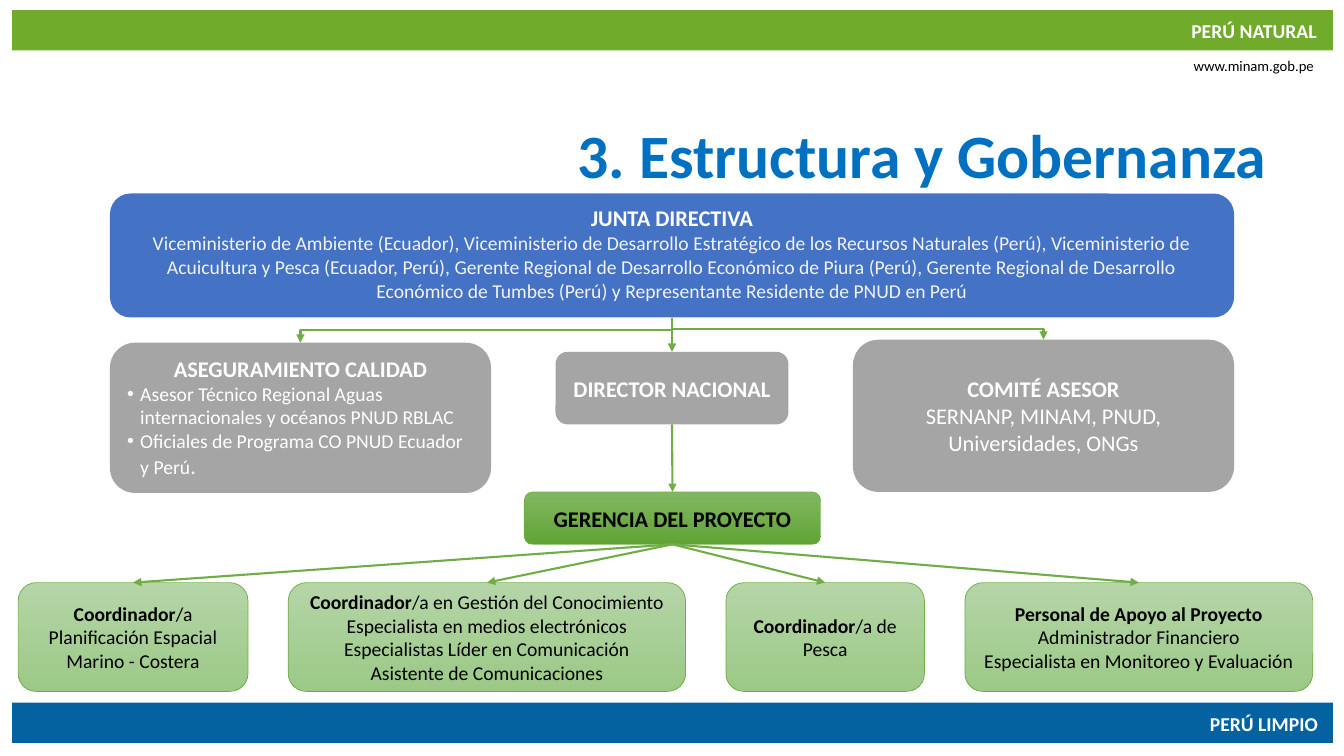
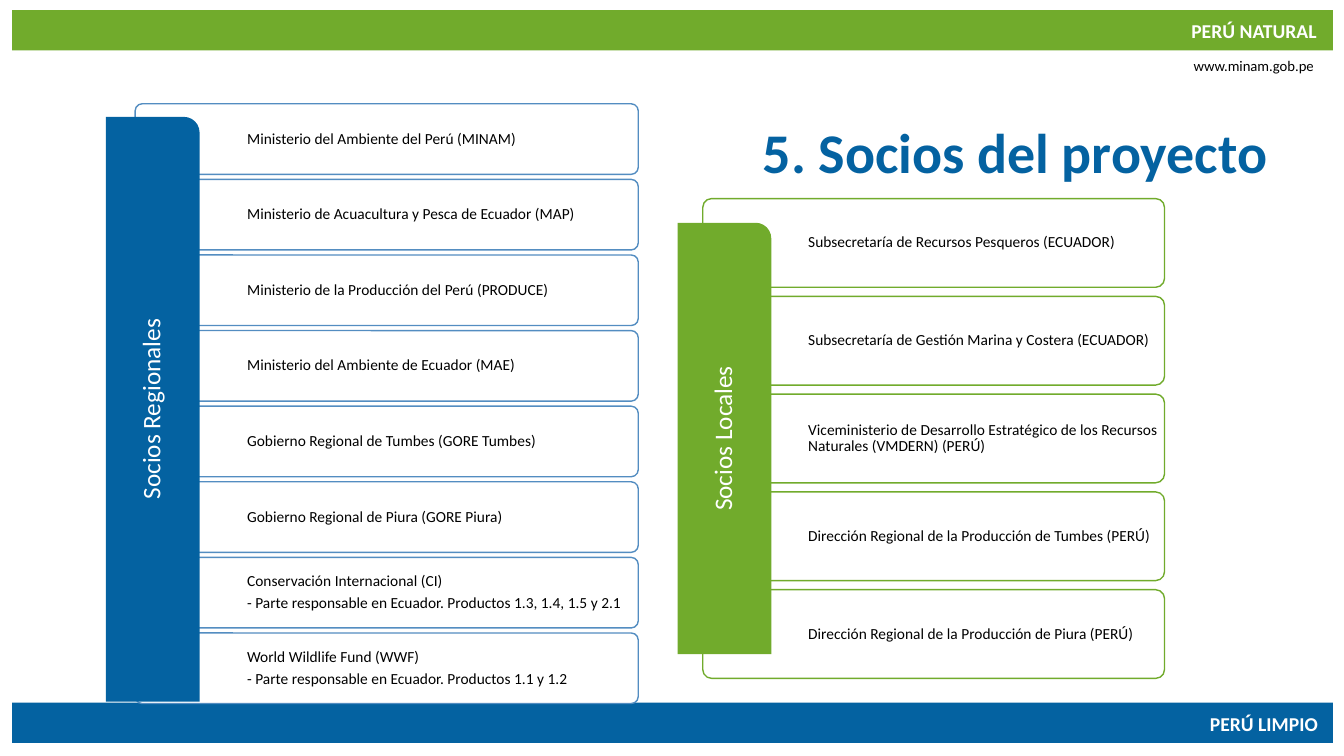
from lxml import etree
from pptx import Presentation
from pptx.dml.color import RGBColor
from pptx.enum.shapes import MSO_CONNECTOR, MSO_SHAPE
from pptx.enum.text import MSO_ANCHOR, PP_ALIGN
from pptx.oxml.ns import qn
from pptx.util import Inches, Pt

RECT = MSO_SHAPE.RECTANGLE
ROUNDED = MSO_SHAPE.ROUNDED_RECTANGLE
ROUND_CORNER = MSO_SHAPE.ROUND_1_RECTANGLE
STRAIGHT, ELBOW = MSO_CONNECTOR.STRAIGHT, MSO_CONNECTOR.ELBOW
TOP, MIDDLE = MSO_ANCHOR.TOP, MSO_ANCHOR.MIDDLE
LEFT, CENTER, RIGHT = PP_ALIGN.LEFT, PP_ALIGN.CENTER, PP_ALIGN.RIGHT

FONT = "Calibri"
WHITE = RGBColor(0xFF, 0xFF, 0xFF)
BLACK = RGBColor(0x00, 0x00, 0x00)
OFF_WHITE = RGBColor(0xF2, 0xF2, 0xF2)
BAND_GREEN = RGBColor(0x71, 0xAB, 0x2C)
BAND_BLUE = RGBColor(0x04, 0x62, 0xA1)
TITLE_BLUE = RGBColor(0x00, 0x70, 0xC0)
BOARD_BLUE = RGBColor(0x44, 0x72, 0xC4)
GREY = RGBColor(0xA5, 0xA5, 0xA5)
LINE_GREEN = RGBColor(0x70, 0xAD, 0x47)
ROW_BLUE = RGBColor(0x53, 0x8D, 0xC1)
MANAGER_GREENS = (RGBColor(0x81, 0xB8, 0x61), RGBColor(0x62, 0xA3, 0x36))
TEAM_GREENS = (RGBColor(0xB5, 0xD5, 0xA7), RGBColor(0x9C, 0xC9, 0x87))


def add_box(slide, preset, place, fill, line=None, line_width=1):
    box = slide.shapes.add_shape(preset, *[Inches(v) for v in place])
    box.shadow.inherit = False
    if fill in (MANAGER_GREENS, TEAM_GREENS):
        box.fill.gradient()
        box.fill.gradient_angle = 270
        for stop, color in zip(box.fill.gradient_stops, fill):
            stop.color.rgb = color
    else:
        box.fill.solid()
        box.fill.fore_color.rgb = fill
    if line is None:
        box.line.fill.background()
    else:
        box.line.color.rgb = line
        box.line.width = Pt(line_width)
    return box


def write(shape, paragraphs, align=CENTER, anchor=MIDDLE, wrap=True, spacing=None):
    frame = shape.text_frame
    frame.word_wrap = wrap
    frame.vertical_anchor = anchor
    for index, runs in enumerate(paragraphs):
        paragraph = frame.add_paragraph() if index else frame.paragraphs[0]
        paragraph.alignment = align
        if spacing:
            paragraph.line_spacing = spacing
        for text, size, bold, color in runs:
            run = paragraph.add_run()
            run.text = text
            run.font.name = FONT
            run.font.size = Pt(size)
            run.font.bold = bold
            run.font.color.rgb = color
    return frame


prs = Presentation()
prs.slide_width, prs.slide_height = Inches(13.33), Inches(7.5)

titles = [
    ("3. Estructura y Gobernanza", 44, True, TITLE_BLUE),
    ("5. Socios del proyecto", 40, True, BAND_BLUE),
]
labels = [
    ((11.7, 0.14, 1.46, 0.34), ("PERÚ NATURAL", 14, True, WHITE)),
    ((11.89, 7.01, 1.28, 0.34), ("PERÚ LIMPIO", 14, True, WHITE)),
    ((11.71, 0.51, 1.42, 0.28), ("www.minam.gob.pe", 10.5, False, BLACK)),
]
for title in titles:
    slide = prs.slides.add_slide(prs.slide_layouts[6])
    for top, color in [(6.97, BAND_BLUE), (0.1, BAND_GREEN)]:
        add_box(slide, RECT, (0.12, top, 13.1, 0.4), color)
    for place, label in labels:
        label_box = slide.shapes.add_textbox(*[Inches(v) for v in place])
        write(label_box, [[label]], RIGHT, TOP, wrap=False)
    title_box = slide.shapes.add_textbox(Inches(0.67), Inches(1.19), Inches(12), Inches(0.59))
    write(title_box, [[title]], RIGHT, TOP, spacing=0.9)

governance, partners = prs.slides

board = add_box(governance, ROUNDED, (1.09, 1.92, 11.15, 1.23), BOARD_BLUE)
write(board, [
    [("JUNTA DIRECTIVA", 16, True, WHITE)],
    [("Viceministerio de Ambiente (Ecuador), Viceministerio de Desarrollo Estratégico de los "
      "Recursos Naturales (Perú), Viceministerio de Acuicultura y Pesca (Ecuador, Perú), "
      "Gerente Regional de Desarrollo Económico de Piura (Perú), Gerente Regional de "
      "Desarrollo Económico de Tumbes (Perú) y Representante Residente de PNUD en Perú",
      14, False, OFF_WHITE)],
], anchor=TOP)

director = add_box(governance, ROUNDED, (5.51, 3.49, 2.31, 0.72), GREY)
write(director, [[("DIRECTOR NACIONAL", 16, True, WHITE)]])

quality = add_box(governance, ROUNDED, (1.09, 3.4, 3.78, 1.49), GREY)
quality_text = write(quality, [
    [("ASEGURAMIENTO CALIDAD", 16, True, WHITE)],
    [("Asesor Técnico Regional Aguas internacionales y océanos PNUD RBLAC", 14, False, WHITE)],
    [("Oficiales de Programa CO PNUD Ecuador y Perú", 14, False, WHITE), (".", 16, False, WHITE)],
], anchor=TOP)
for advisor in quality_text.paragraphs[1:]:
    advisor.alignment = LEFT
    properties = advisor._p.get_or_add_pPr()
    properties.set("marL", str(Inches(0.13)))
    properties.set("indent", str(-Inches(0.13)))
    etree.SubElement(properties, qn("a:buFont")).set("typeface", "Arial")
    etree.SubElement(properties, qn("a:buChar")).set("char", "•")

committee = add_box(governance, ROUNDED, (8.46, 3.37, 3.78, 1.51), GREY)
write(committee, [
    [("COMITÉ ASESOR", 16, True, WHITE)],
    [("SERNANP, MINAM, PNUD, Universidades, ONGs", 16, False, WHITE)],
])

manager = add_box(governance, ROUNDED, (5.2, 4.88, 2.94, 0.52), MANAGER_GREENS, LINE_GREEN, 0.5)
write(manager, [[("GERENCIA DEL PROYECTO", 16, True, BLACK)]])

teams = [
    (0.18, 2.28, "Coordinador", ["/a Planificación Espacial Marino - Costera"]),
    (2.86, 3.94, "Coordinador", ["/a en Gestión del Conocimiento",
                                 "Especialista en medios electrónicos",
                                 "Especialistas Líder en Comunicación",
                                 "Asistente de Comunicaciones"]),
    (7.2, 1.97, "Coordinador", ["/a de Pesca"]),
    (9.57, 3.45, "Personal de Apoyo al Proyecto", ["", "Administrador Financiero",
                                                   "Especialista en Monitoreo y Evaluación"]),
]
links = [(board, director, STRAIGHT), (board, quality, ELBOW), (board, committee, ELBOW),
         (director, manager, STRAIGHT)]
for left, width, lead, (lead_rest, *members) in teams:
    team = add_box(governance, ROUNDED, (left, 5.78, width, 1.08), TEAM_GREENS, LINE_GREEN, 0.5)
    lead_runs = [(lead, 14, True, BLACK)]
    if lead_rest:
        lead_runs.append((lead_rest, 14, False, BLACK))
    write(team, [lead_runs] + [[(member, 14, False, BLACK)] for member in members])
    links.append((manager, team, STRAIGHT))

for upper, lower, kind in links:
    arrow = governance.shapes.add_connector(kind, 0, 0, 0, 0)
    arrow.begin_connect(upper, 2)
    arrow.end_connect(lower, 0)
    arrow.line.color.rgb = LINE_GREEN
    arrow.line.width = Pt(1.5)
    shape_properties = arrow._element.spPr
    etree.SubElement(shape_properties.find(qn("a:ln")), qn("a:tailEnd")).set("type", "triangle")
    etree.SubElement(shape_properties, qn("a:effectLst"))
    if kind == ELBOW:
        goes_right = arrow.end_x > arrow.begin_x
        left, top, width, height = arrow.left, arrow.top, arrow.width, arrow.height
        arrow.left, arrow.top = left + (width - height) // 2, top + (height - width) // 2
        arrow.width, arrow.height = height, width
        transform = shape_properties.find(qn("a:xfrm"))
        transform.set("rot", "16200000" if goes_right else "5400000")
        transform.set("flipH", "1" if goes_right else "0")

regional_partners = [
    ["Ministerio del Ambiente del Perú (MINAM)"],
    ["Ministerio de Acuacultura y Pesca de Ecuador (MAP)"],
    ["Ministerio de la Producción del Perú (PRODUCE)"],
    ["Ministerio del Ambiente de Ecuador (MAE)"],
    ["Gobierno Regional de Tumbes (GORE Tumbes)"],
    ["Gobierno Regional de Piura (GORE Piura)"],
    ["Conservación Internacional (CI)",
     "- Parte responsable en Ecuador. Productos 1.3, 1.4, 1.5 y 2.1"],
    ["World Wildlife Fund (WWF)",
     "- Parte responsable en Ecuador. Productos 1.1 y 1.2"],
]
local_partners = [
    ["Subsecretaría de Recursos Pesqueros (ECUADOR)"],
    ["Subsecretaría de Gestión Marina y Costera (ECUADOR)"],
    ["Viceministerio de Desarrollo Estratégico de los Recursos Naturales (VMDERN) (PERÚ)"],
    ["Dirección Regional de la Producción de Tumbes (PERÚ)"],
    ["Dirección Regional de la Producción de Piura (PERÚ)"],
]
partner_groups = [
    ("Socios Regionales", (1.05, 1.16, 0.93, 5.8), BAND_BLUE, ROW_BLUE,
     (1.34, 1.03, 4.99, 0.7), 0.75, 1.09, regional_partners),
    ("Socios Locales", (6.72, 2.21, 0.93, 4.28), BAND_GREEN, BAND_GREEN,
     (6.97, 1.97, 4.58, 0.88), 0.97, 1.02, local_partners),
]
for heading, spine_place, spine_color, row_color, first_row, pitch, indent, names in partner_groups:
    left, top, width, height = first_row
    for index, lines in enumerate(names):
        row = add_box(partners, ROUNDED, (left, top + index * pitch, width, height), WHITE, row_color)
        row.adjustments[0] = 0.1
        row_text = write(row, [[(line, 11, False, BLACK)] for line in lines], LEFT, spacing=0.9)
        row_text.margin_left = Inches(indent)
        row_text.margin_right = Inches(0.03)
        for paragraph in row_text.paragraphs:
            paragraph.space_after = Pt(4)
    spine = add_box(partners, ROUND_CORNER, spine_place, spine_color)
    spine_text = write(spine, [[(heading, 18, False, WHITE)]])
    spine_text._txBody.bodyPr.set("vert", "vert270")

prs.save("out.pptx")
